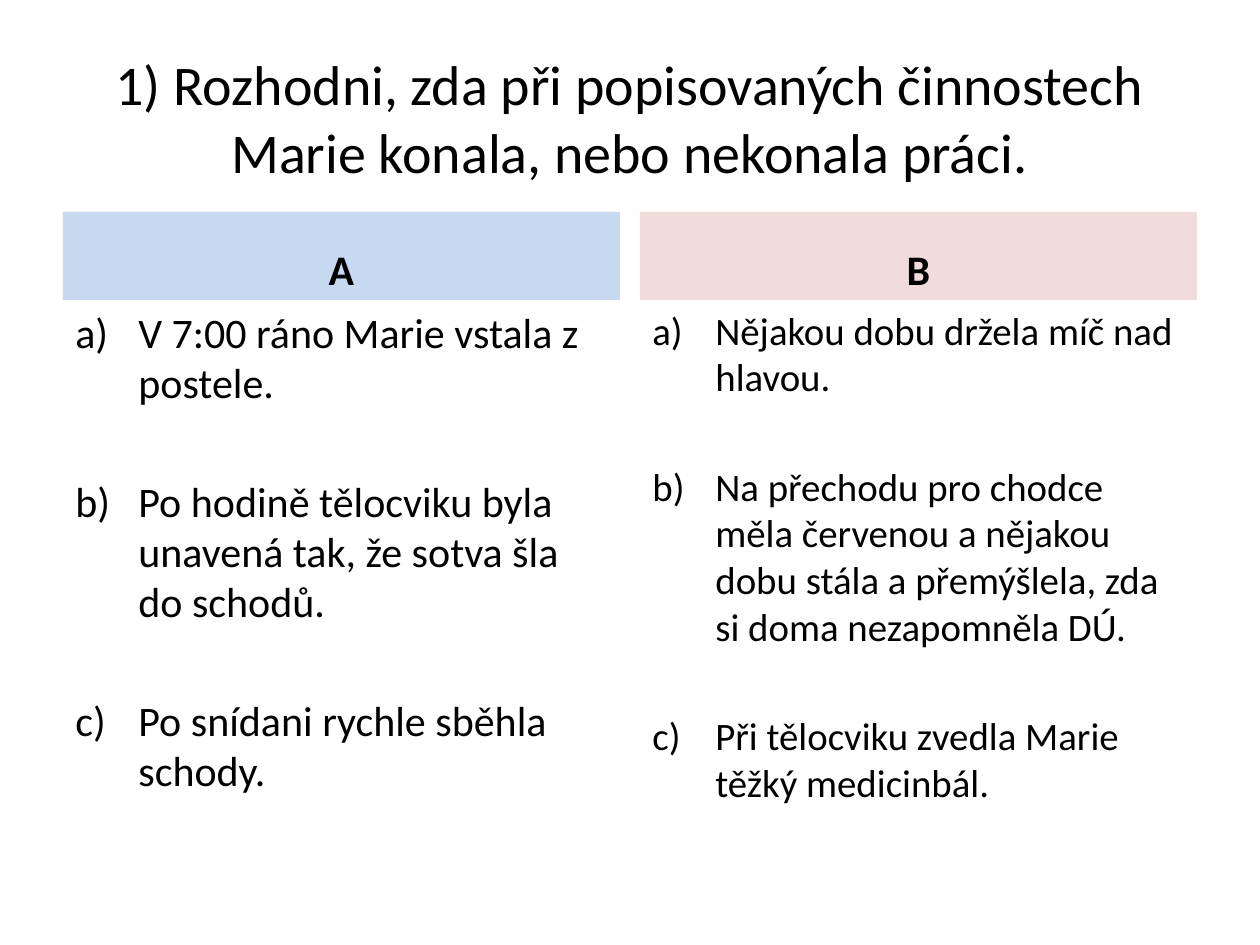
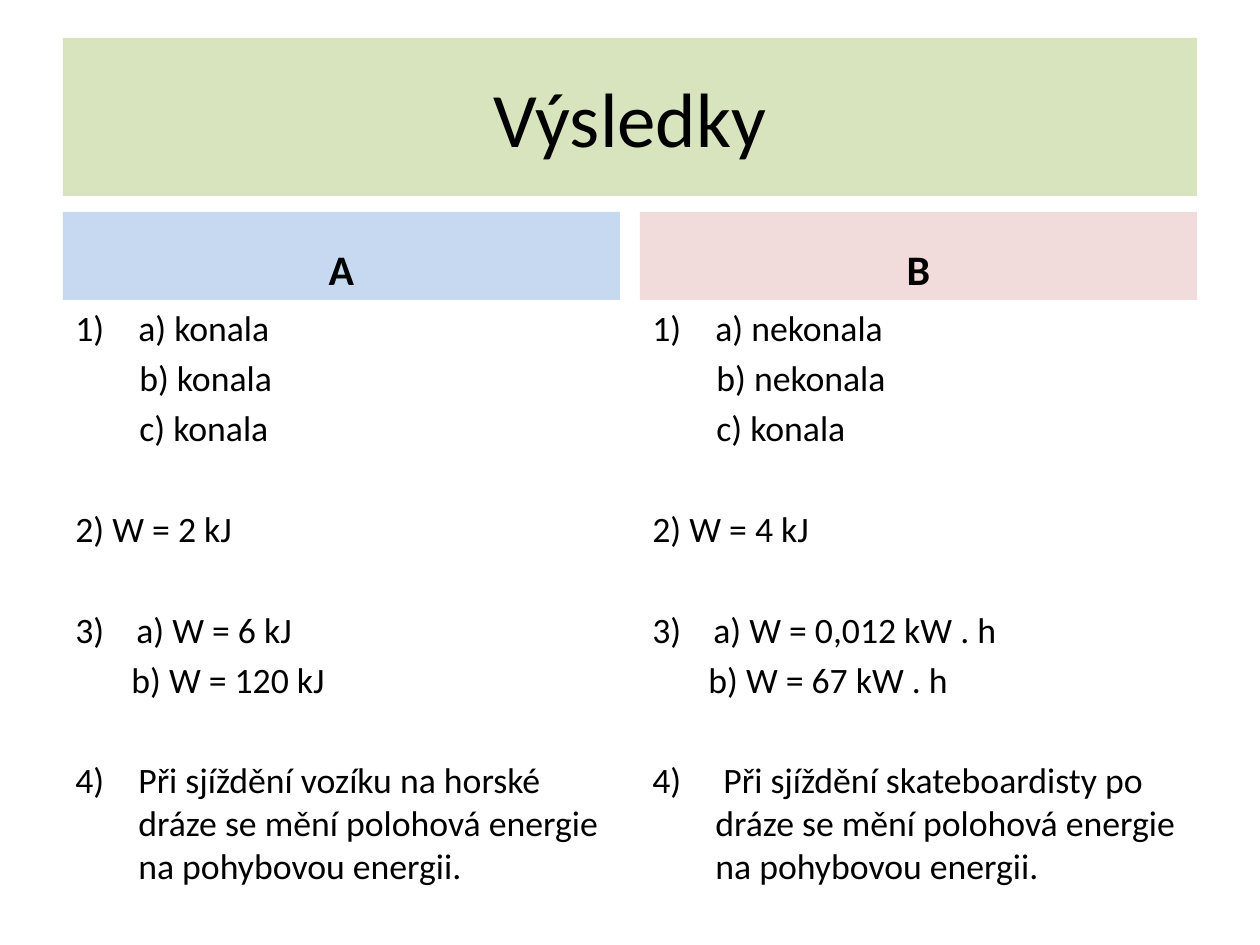
import dataclasses
import functools

import lxml.etree
import pptx
import pptx.dml.color
import pptx.enum.shapes
import pptx.enum.text
import pptx.oxml.ns
import pptx.util

PX = 914400 / 126
ALIGN = pptx.enum.text.PP_ALIGN
ANCHOR = pptx.enum.text.MSO_ANCHOR


@dataclasses.dataclass(frozen=True)
class Theme:
    font: str = "Calibri"
    text: str = "000000"
    green: str = "D7E4BD"
    blue: str = "C6D9F1"
    pink: str = "F2DCDB"
    question_title: float = 32
    answer_title: float = 44
    column_head: float = 24
    answer: float = 20.4
    paragraph_gap: float = 0.2
    group_gap: float = 1.62


@dataclasses.dataclass(frozen=True)
class Box:
    left: int
    top: int
    width: int
    height: int

    def emu(self):
        return [px(side) for side in dataclasses.astuple(self)]


@dataclasses.dataclass(frozen=True)
class Item:
    """A list entry; number 0 means that the entry has no number."""
    text: str
    number: int = 0
    indent: int = 63
    new_group: bool = False
    scheme: str = "arabicParenR"


THEME = Theme()
TITLE = Box(63, 38, 1134, 158)
COLUMNS = [Box(63, 212, 557, 632), Box(640, 212, 557, 632)]
HEAD_HEIGHT = 88
HEADS = [("A", THEME.blue), ("B", THEME.pink)]


def px(length):
    return pptx.util.Emu(round(length * PX))


def set_all(target, values):
    for name, value in values.items():
        setattr(target, name, value)


def add_box(page, box, fill=None, anchor=ANCHOR.TOP):
    """Add a text box, or a filled rectangle, and return its text frame."""
    if fill:
        shape = page.shapes.add_shape(
            pptx.enum.shapes.MSO_SHAPE.RECTANGLE, *box.emu())
        shape.shadow.inherit = False
        shape.fill.solid()
        shape.fill.fore_color.rgb = pptx.dml.color.RGBColor.from_string(fill)
        shape.line.fill.background()
    else:
        shape = page.shapes.add_textbox(*box.emu())
    set_all(shape.text_frame, {"word_wrap": True, "vertical_anchor": anchor})
    return shape.text_frame


def write(para, text, size, bold=False, **layout):
    set_all(para, layout)
    span = para.add_run()
    span.text = text
    set_all(span.font, {"name": THEME.font, "size": pptx.util.Pt(size), "bold": bold})
    span.font.color.rgb = pptx.dml.color.RGBColor.from_string(THEME.text)


def set_list_format(para, item):
    properties = para._p.get_or_add_pPr()
    properties.set("marL", str(px(item.indent)))
    properties.set("indent", str(px(-item.indent if item.number else 0)))
    if item.number:
        lxml.etree.SubElement(
            properties, pptx.oxml.ns.qn("a:buAutoNum"),
            {"type": item.scheme, "startAt": str(item.number)})


def add_title(page, text, size, fill=None):
    frame = add_box(page, TITLE, fill, ANCHOR.MIDDLE)
    write(frame.paragraphs[0], text, size, alignment=ALIGN.CENTER)


def add_column(page, box, head, fill, items, size):
    head_frame = add_box(
        page, dataclasses.replace(box, height=HEAD_HEIGHT), fill, ANCHOR.BOTTOM)
    write(head_frame.paragraphs[0], head, THEME.column_head, bold=True,
          alignment=ALIGN.CENTER)
    frame = add_box(page, Box(box.left, box.top + HEAD_HEIGHT,
                              box.width, box.height - HEAD_HEIGHT))
    for index, item in enumerate(items):
        para = frame.add_paragraph() if index else frame.paragraphs[0]
        gap = THEME.group_gap if item.new_group else THEME.paragraph_gap
        write(para, item.text, size, space_before=pptx.util.Pt(round(gap * size, 1)))
        set_list_format(para, item)


def add_page(deck, title, columns):
    """Add a page with a title and two columns, each of items and a text size."""
    page = deck.slides.add_slide(deck.slide_layouts[6])
    add_title(page, **title)
    for box, head, (items, size) in zip(COLUMNS, HEADS, columns):
        add_column(page, box, *head, items, size)


def questions(*texts):
    question = functools.partial(Item, scheme="alphaLcParenR")
    return [question(text, number, new_group=number > 1)
            for number, text in enumerate(texts, 1)]


def answers(first, second, third, fourth):
    """Lay out the results of the four tasks of one group."""
    return [
        Item(f"a) {first[0]}", 1),
        Item(f"b) {first[1]}", indent=64),
        Item(f"c) {first[2]}", indent=64),
        Item(f"W = {second}", 2, indent=37, new_group=True),
        Item(f"a) W = {third[0]}", 3, indent=61, new_group=True),
        Item(f"b) W = {third[1]}", indent=56),
        Item(fourth, 4, new_group=True),
    ]


def main():
    deck = pptx.Presentation()
    set_all(deck, {"slide_width": px(1260), "slide_height": px(945)})
    add_page(
        deck,
        {"text": "1) Rozhodni, zda při popisovaných činnostech "
                 "Marie konala, nebo nekonala práci.",
         "size": THEME.question_title},
        [(questions("V 7:00 ráno Marie vstala z postele.",
                    "Po hodině tělocviku byla unavená tak, že sotva šla do schodů.",
                    "Po snídani rychle sběhla schody."), 24),
         (questions("Nějakou dobu držela míč nad hlavou.",
                    "Na přechodu pro chodce měla červenou a nějakou dobu stála "
                    "a přemýšlela, zda si doma nezapomněla DÚ.",
                    "Při tělocviku zvedla Marie těžký medicinbál."), 22.2)])
    energy = "dráze se mění polohová energie na pohybovou energii."
    add_page(
        deck,
        {"text": "Výsledky", "size": THEME.answer_title, "fill": THEME.green},
        [(answers(["konala", "konala", "konala"], "2 kJ", ["6 kJ", "120 kJ"],
                  f"Při sjíždění vozíku na horské {energy}"), THEME.answer),
         (answers(["nekonala", "nekonala", "konala"], "4 kJ",
                  ["0,012 kW . h", "67 kW . h"],
                  f" Při sjíždění skateboardisty po {energy}"), THEME.answer)])
    deck.save("out.pptx")


if __name__ == "__main__":
    main()
